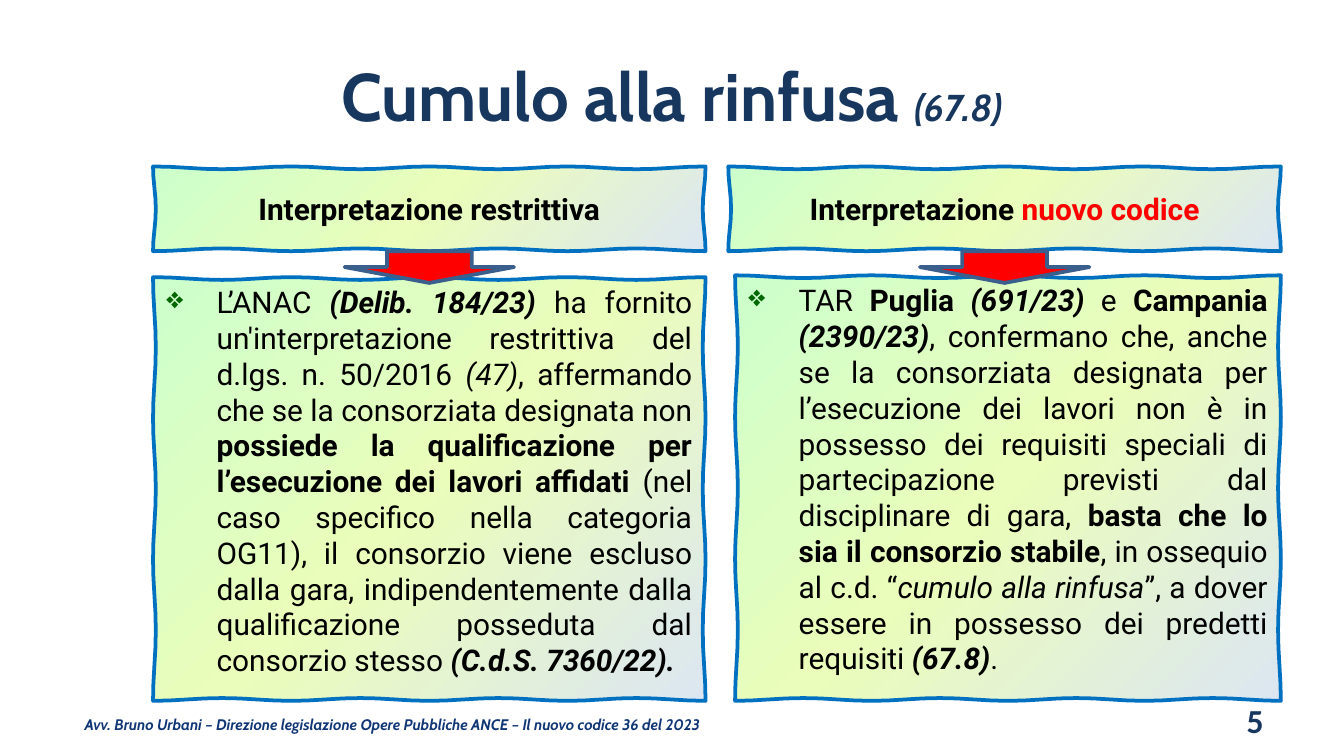
from copy import deepcopy
from math import hypot, pi, sin

from pptx import Presentation
from pptx.dml.color import RGBColor
from pptx.enum import shapes, text
from pptx.oxml import ns, xmlchemy
from pptx.util import Pt

NAVY = RGBColor(0x17, 0x37, 0x5E)
INK = RGBColor(0x10, 0x36, 0x76)
BLUE = RGBColor(0x00, 0x70, 0xC0)
STEEL = RGBColor(0x3A, 0x5F, 0x8C)
RED = RGBColor(0xFF, 0x00, 0x00)
BLACK = RGBColor(0x00, 0x00, 0x00)
GREEN = RGBColor(0x00, 0x66, 0x00)
FADE = [
    (0, RGBColor(0xDC, 0xE6, 0xF2)),
    (0.5, RGBColor(0xEB, 0xFD, 0xBA)),
    (0.69, RGBColor(0xDF, 0xFE, 0xC1)),
    (1, RGBColor(0xCC, 0xFF, 0xCC)),
]
LEFT, CENTER, RIGHT, JUST = (
    text.PP_ALIGN.LEFT, text.PP_ALIGN.CENTER,
    text.PP_ALIGN.RIGHT, text.PP_ALIGN.JUSTIFY,
)
TOP, MID = text.MSO_ANCHOR.TOP, text.MSO_ANCHOR.MIDDLE


class Deck:
    font = "Roboto"
    size = 16
    wave = 1.5
    edge = 2

    def __init__(self, slide):
        self.slide = slide

    def letter(self, shape, runs, align, anchor, font=font, size=size, color=BLACK):
        frame = shape.text_frame
        frame.word_wrap = True
        frame.vertical_anchor = anchor
        para = frame.paragraphs[0]
        para.alignment = align
        for words, style, *more in runs:
            run = para.add_run()
            run.text = words
            face = run.font
            face.name, face.size = font, Pt(size)
            face.bold, face.italic = "b" in style, "i" in style
            face.color.rgb = color
            for extra in more:
                if isinstance(extra, RGBColor):
                    face.color.rgb = extra
                else:
                    face.size = Pt(extra)
        return para

    def label(self, box, runs, align, **look):
        shape = self.slide.shapes.add_textbox(*map(Pt, box))
        self.letter(shape, runs, align, MID, **look)
        return shape

    def sketch(self, box, runs, align, anchor):
        x, y, w, h = box
        ends = [(x, y), (x + w, y), (x + w, y + h), (x, y + h)]
        dots = []
        for (ax, ay), (bx, by) in zip(ends, ends[1:] + ends[:1]):
            dx, dy = bx - ax, by - ay
            span = hypot(dx, dy)
            waves = max(1, round(span / 75))
            steps = waves * 8
            for i in range(steps):
                t = i / steps
                off = self.wave * sin(pi * t * waves) ** 2 / span
                dots.append((Pt(ax + dx * t - dy * off), Pt(ay + dy * t + dx * off)))
        pen = self.slide.shapes.build_freeform(*dots[0])
        pen.add_line_segments(dots[1:], close=True)
        shape = pen.convert_to_shape()
        shape.shadow.inherit = False
        self.shade(shape)
        shape.line.color.rgb = BLUE
        shape.line.width = Pt(self.edge)
        return self.letter(shape, runs, align, anchor)

    def shade(self, shape):
        fill = shape.fill
        fill.gradient()
        fill.gradient_angle = 135
        stops = shape._element.spPr.find(".//" + ns.qn("a:gsLst"))
        while len(stops) < len(FADE):
            stops.append(deepcopy(stops[0]))
        for stop, (place, color) in zip(fill.gradient_stops, FADE):
            stop.position = place
            stop.color.rgb = color

    def bullet(self, para):
        props = para._p.get_or_add_pPr()
        props.set("marL", str(Pt(27)))
        props.set("indent", str(-Pt(27)))
        tint = xmlchemy.OxmlElement("a:buClr")
        rgb = xmlchemy.OxmlElement("a:srgbClr")
        rgb.set("val", str(GREEN))
        tint.append(rgb)
        mark = xmlchemy.OxmlElement("a:buChar")
        mark.set("char", "❖")
        props.extend([tint, mark])

    def arrow(self, box):
        kind = shapes.MSO_SHAPE.DOWN_ARROW
        shape = self.slide.shapes.add_shape(kind, *map(Pt, box))
        shape.shadow.inherit = False
        shape.fill.solid()
        shape.fill.fore_color.rgb = RED
        shape.line.color.rgb = STEEL
        shape.line.width = Pt(self.edge)


HEADS = [
    (82, [("Interpretazione restrittiva", "b")]),
    (390.2, [("Interpretazione ", "b"), ("nuovo codice", "b", RED)]),
]
BODIES = [
    ((393.8, 147.5, 292.4, 228), [
        ("TAR ", ""), ("Puglia ", "b"), ("(691/23)", "bi"), (" e ", ""),
        ("Campania ", "b"), ("(2390/23)", "bi"),
        (", confermano che, anche se la consorziata designata per l’esecuzione "
         "dei lavori non è in possesso dei requisiti speciali di partecipazione "
         "previsti dal disciplinare di gara, ", ""),
        ("basta che lo sia il consorzio stabile", "b"),
        (", in ossequio al c.d. “", ""), ("cumulo alla rinfusa", "i"),
        ("”, a dover essere in possesso dei predetti requisiti ", ""),
        ("(67.8)", "bi"), (".", ""),
    ]),
    ((82, 148.5, 296, 227), [
        ("L’ANAC ", ""), ("(Delib. 184/23) ", "bi"),
        ("ha fornito un'interpretazione restrittiva del d.lgs. n. 50/2016 ", ""),
        ("(47)", "i"),
        (", affermando che se la consorziata designata non ", ""),
        ("possiede la qualificazione per l’esecuzione dei lavori affidati ", "b"),
        ("(nel caso specifico nella categoria OG11), il consorzio viene escluso "
         "dalla gara, indipendentemente dalla qualificazione posseduta dal "
         "consorzio stesso ", ""),
        ("(C.d.S. 7360/22).", "bi"),
    ]),
]


def main():
    show = Presentation()
    show.slide_width, show.slide_height = Pt(720), Pt(405)
    deck = Deck(show.slides.add_slide(show.slide_layouts[6]))

    foot = deck.label(
        (40.3, 379.5, 353.5, 17.3),
        [("Avv. Bruno Urbani – Direzione legislazione Opere Pubbliche ANCE"
          " – Il nuovo codice 36 del 2023", "bi")],
        LEFT, font="Cabin", size=8.2, color=INK)
    frame = foot.text_frame
    frame.margin_left = frame.margin_right = Pt(5)
    frame.margin_top = frame.margin_bottom = Pt(2.7)
    deck.label((36, 16.6, 648, 67.7),
               [("Cumulo alla rinfusa ", "b"), ("(67.8)", "bi", 20)],
               CENTER, font="Cabin", size=36, color=NAVY)
    deck.label((516, 375, 168, 21.6), [("5", "b")],
               RIGHT, font="Calibri", size=18, color=NAVY)

    for box, runs in BODIES:
        deck.bullet(deck.sketch(box, runs, JUST, TOP))
    for x, runs in HEADS:
        deck.sketch((x, 89.2, 296, 45.4), runs, CENTER, MID)
    for x, _ in HEADS:
        deck.arrow((x + 102.6, 134.6, 90.8, 17))

    show.save("out.pptx")


if __name__ == "__main__":
    main()
